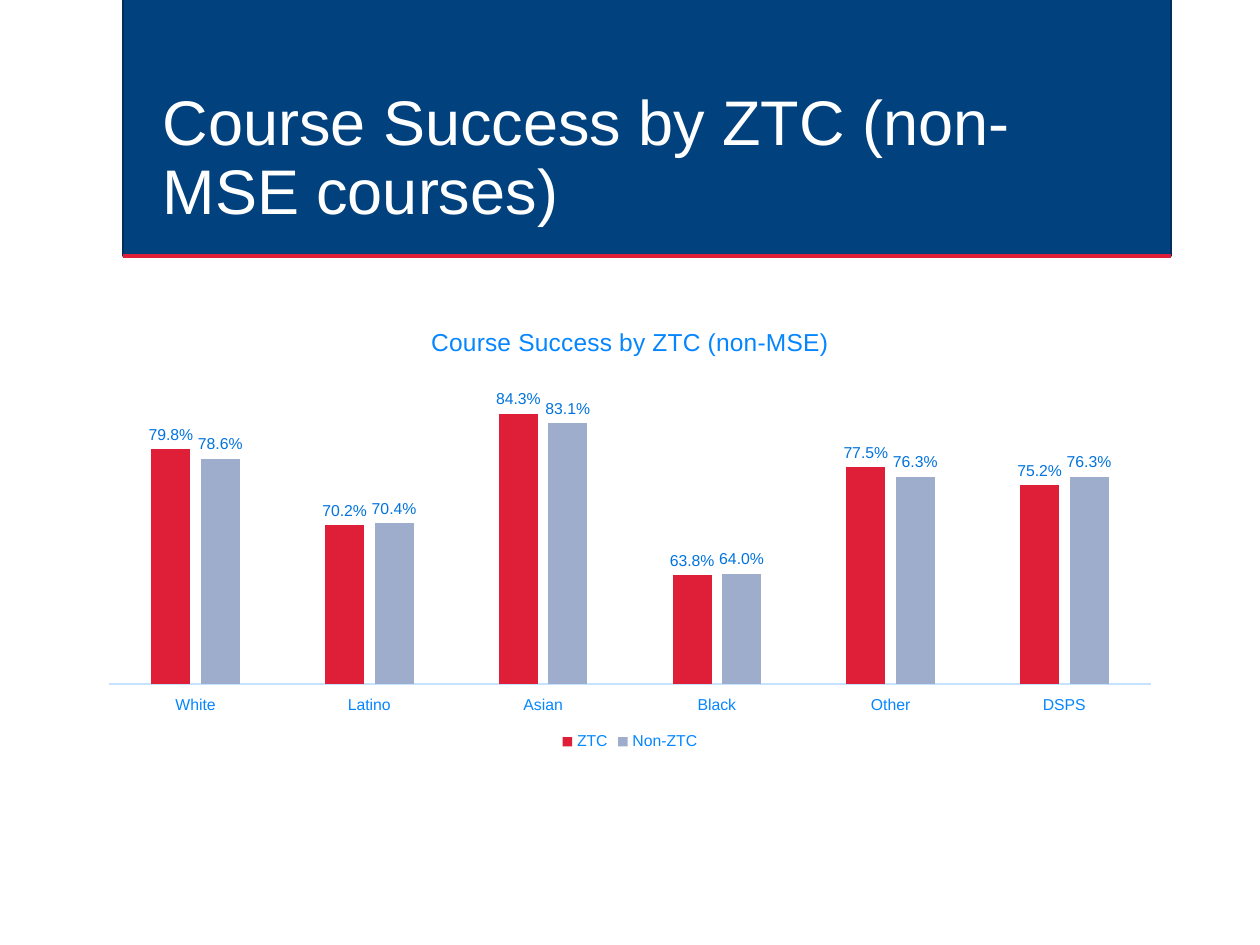
from lxml import etree
from pptx import Presentation
from pptx.chart.data import CategoryChartData
from pptx.dml.color import RGBColor
from pptx.enum.chart import XL_CHART_TYPE, XL_LABEL_POSITION, XL_LEGEND_POSITION, XL_TICK_LABEL_POSITION, XL_TICK_MARK
from pptx.enum.shapes import MSO_CONNECTOR, MSO_SHAPE
from pptx.enum.text import MSO_ANCHOR, MSO_AUTO_SIZE, PP_ALIGN
from pptx.oxml import parse_xml
from pptx.oxml.ns import nsdecls, qn
from pptx.util import Pt

COLUMN_CLUSTERED = XL_CHART_TYPE.COLUMN_CLUSTERED
OUTSIDE_END = XL_LABEL_POSITION.OUTSIDE_END
LEGEND_BOTTOM = XL_LEGEND_POSITION.BOTTOM
LABELS_LOW = XL_TICK_LABEL_POSITION.LOW
NO_TICK = XL_TICK_MARK.NONE
STRAIGHT = MSO_CONNECTOR.STRAIGHT
RECTANGLE = MSO_SHAPE.RECTANGLE
BOTTOM = MSO_ANCHOR.BOTTOM
NO_AUTOFIT = MSO_AUTO_SIZE.NONE
LEFT = PP_ALIGN.LEFT
CENTER = PP_ALIGN.CENTER

NAVY = RGBColor(0x00, 0x41, 0x7E)
DARK_NAVY = RGBColor(0x00, 0x2F, 0x5B)
RED = RGBColor(0xDE, 0x1F, 0x37)
GREY_BLUE = RGBColor(0x9F, 0xAD, 0xCD)
BRIGHT_BLUE = RGBColor(0x05, 0x86, 0xFF)
LABEL_BLUE = RGBColor(0x00, 0x73, 0xDE)
PALE_BLUE = RGBColor(0xC5, 0xE3, 0xFF)
WHITE = RGBColor(0xFF, 0xFF, 0xFF)

FONT = "Arial"
PERCENT = "0.0%"
EMU_PER_PX = 914400 / 126

CATEGORIES = ["White", "Latino", "Asian", "Black", "Other", "DSPS"]
SERIES = [
    ("ZTC", [0.798, 0.702, 0.843, 0.638, 0.775, 0.752], RED),
    ("Non-ZTC", [0.786, 0.704, 0.831, 0.64, 0.763, 0.763], GREY_BLUE),
]


def px(length):
    return round(length * EMU_PER_PX)


def format_font(font, size, color):
    font.name = FONT
    font.size = Pt(size)
    font.bold = False
    font.color.rgb = color


def write_text(text_frame, text, size, color, align=LEFT, line_spacing=None):
    text_frame.text = text
    paragraph = text_frame.paragraphs[0]
    paragraph.alignment = align
    paragraph.line_spacing = line_spacing
    format_font(paragraph.runs[0].font, size, color)


def add_title_band(slide, left, top, width, height):
    band = slide.shapes.add_shape(RECTANGLE, px(left), px(top), px(width), px(height))
    band.shadow.inherit = False
    band.fill.solid()
    band.fill.fore_color.rgb = NAVY
    band.line.color.rgb = DARK_NAVY
    band.line.width = Pt(1.25)

    bottom = px(top + height)
    rule = slide.shapes.add_connector(STRAIGHT, px(left), bottom, px(left + width), bottom)
    rule.line.color.rgb = RED
    rule.line.width = Pt(2.5)
    etree.SubElement(rule.element.spPr, qn("a:effectLst"))

    title = slide.shapes.title
    title.left, title.top = px(left + 27), px(top + 114)
    title.width, title.height = px(width - 55), px(123)
    frame = title.text_frame
    frame.word_wrap = True
    frame.auto_size = NO_AUTOFIT
    frame.vertical_anchor = BOTTOM
    write_text(frame, "Course Success by ZTC (non-MSE courses)", size=36, color=WHITE, line_spacing=0.9)
    slide.shapes.element.append(title.element)


def set_plot_layout(chart, left, top, width, height):
    plot_area = chart.element.find(".//" + qn("c:plotArea"))
    for layout in plot_area.findall(qn("c:layout")):
        plot_area.remove(layout)
    plot_area.insert(0, parse_xml(
        f'<c:layout {nsdecls("c")}><c:manualLayout><c:layoutTarget val="inner"/>'
        '<c:xMode val="edge"/><c:yMode val="edge"/>'
        f'<c:x val="{left}"/><c:y val="{top}"/><c:w val="{width}"/><c:h val="{height}"/>'
        '</c:manualLayout></c:layout>'
    ))


def format_axes(chart):
    category_axis = chart.category_axis
    category_axis.major_tick_mark = NO_TICK
    category_axis.tick_label_position = LABELS_LOW
    category_axis.format.line.color.rgb = PALE_BLUE
    category_axis.format.line.width = Pt(0.75)
    format_font(category_axis.tick_labels.font, 9, BRIGHT_BLUE)

    value_axis = chart.value_axis
    value_axis.minimum_scale = 0.5
    value_axis.maximum_scale = 0.9
    value_axis.has_major_gridlines = False
    value_axis.visible = False


def format_series(series, color):
    series.format.fill.solid()
    series.format.fill.fore_color.rgb = color
    series.invert_if_negative = False
    labels = series.data_labels
    labels.show_value = True
    labels.position = OUTSIDE_END
    labels.number_format = PERCENT
    labels.number_format_is_linked = False
    format_font(labels.font, 9, LABEL_BLUE)


def add_success_chart(slide, left, top, width, height):
    data = CategoryChartData(number_format=PERCENT)
    data.categories = CATEGORIES
    for name, values, _ in SERIES:
        data.add_series(name, values)
    chart = slide.shapes.add_chart(
        COLUMN_CLUSTERED, px(left), px(top), px(width), px(height), data
    ).chart
    format_font(chart.font, 10, NAVY)

    chart.has_title = True
    chart.chart_title.include_in_layout = False
    write_text(chart.chart_title.text_frame, "Course Success by ZTC (non-MSE)",
               size=14, color=BRIGHT_BLUE, align=CENTER)

    chart.has_legend = True
    chart.legend.position = LEGEND_BOTTOM
    chart.legend.include_in_layout = False
    format_font(chart.legend.font, 9, BRIGHT_BLUE)

    plot = chart.plots[0]
    plot.gap_width = 219
    plot.overlap = -27
    plot.vary_by_categories = False
    format_axes(chart)
    for series, (_, _, color) in zip(plot.series, SERIES):
        format_series(series, color)
    set_plot_layout(chart, left=0.02, top=0.14, width=0.96, height=0.7)


def main():
    presentation = Presentation()
    presentation.slide_width = px(1260)
    presentation.slide_height = px(945)
    slide = presentation.slides.add_slide(presentation.slide_layouts[5])
    add_title_band(slide, left=123, top=-3, width=1048, height=259)
    add_success_chart(slide, left=87, top=306, width=1086, height=450)
    presentation.save("out.pptx")


if __name__ == "__main__":
    main()
